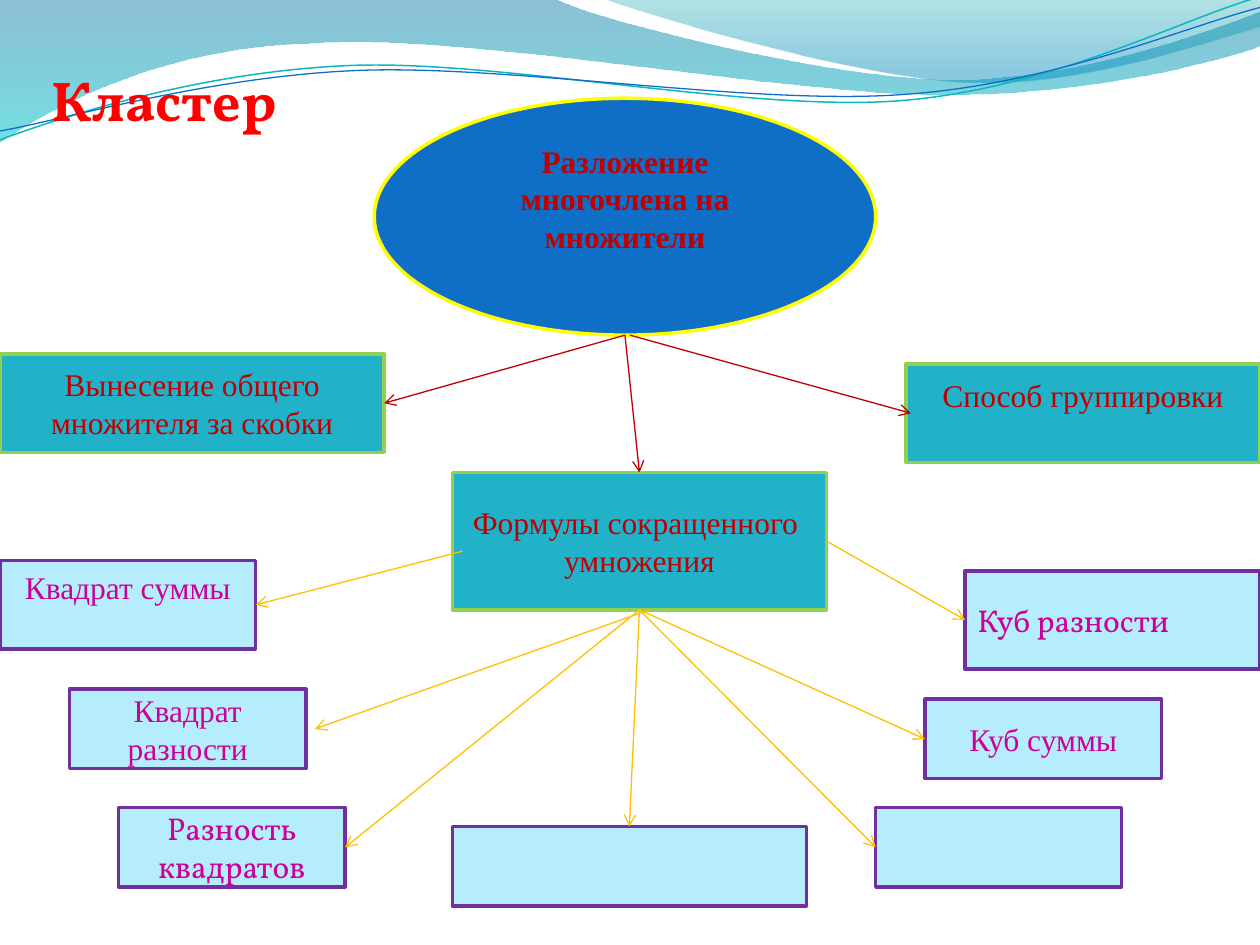
import math
from dataclasses import dataclass

from lxml import etree
from pptx import Presentation
from pptx import util as u
from pptx.dml.color import RGBColor
from pptx.enum import shapes, text
from pptx.oxml.ns import qn


@dataclass(frozen=True)
class Theme:
    serif: str = "Times New Roman"
    display: str = "Vollkorn"
    title_size: int = 32
    body_size: int = 18
    title: str = "FF0000"
    method: str = "C00000"
    formula: str = "CC0099"
    formula_arrow: str = "FFC000"
    blue: str = "0F6FC6"
    teal: str = "0AB8BF"


@dataclass(frozen=True)
class Box:
    left: float
    top: float
    width: float
    height: float

    def inside(self, left, top, width, height):
        return Box(self.left + left, self.top + top, width, height)

    def lengths(self):
        return [u.Inches(side) for side in (self.left, self.top, self.width, self.height)]


THEME = Theme()
CURVE_TILT = 357.3
SIDES = {"left": (0, 0.5), "right": (1, 0.5), "top": (0.5, 0), "bottom": (0.5, 1)}
STYLES = {
    "root": {"fill": THEME.blue, "line": "FFFF00", "color": THEME.method, "bold": True},
    "method": {"fill": "21B2C9", "line": "92D050", "color": THEME.method},
    "formula": {"fill": "B5EDFD", "line": "7030A0", "color": THEME.formula},
}
LEFT_WAVE = [
    (0, 0), (4.4, -0.01),
    (4.76, 0.17, 6.64, 0.63, 7.58, 0.63), (8.53, 0.63, 9.58, 0.26, 10, 0.09),
    (10.01, 0.36),
    (9.83, 0.44, 8.7, 0.76, 7.46, 0.75), (6.22, 0.75, 3.82, 0.28, 2.57, 0.34),
    (1.29, 0.36, 0.46, 0.83, -0.01, 1.13), (0, 0),
]
RIGHT_WAVE = [
    (4.79, -0.01),
    (5.09, 0.11, 6.82, 0.62, 7.69, 0.65), (8.56, 0.69, 9.61, 0.32, 10, 0.21),
    (10, 0), (4.79, -0.01),
]
TEAL_CURVE = [
    (0, 1.11),
    (0.48, 0.93, 1.58, 0.57, 2.77, 0.52), (3.95, 0.47, 5.93, 0.89, 7.13, 0.8),
    (8.33, 0.71, 9.38, 0.15, 9.98, -0.02),
]
BLUE_CURVE = [
    (0, 1.04),
    (0.47, 0.96, 1.64, 0.61, 2.83, 0.56), (4.03, 0.51, 5.97, 0.84, 7.17, 0.75),
    (8.36, 0.67, 9.41, 0.21, 10, 0.06),
]


def color(value):
    return RGBColor.from_string(value)


def level(point, center):
    turn = math.radians(360 - CURVE_TILT)
    x, y = point[0] - center[0], point[1] - center[1]
    return (center[0] + x * math.cos(turn) - y * math.sin(turn),
            center[1] + x * math.sin(turn) + y * math.cos(turn))


def add_outline(page, box, segments, closed, center=None):
    points = [segment[i:i + 2] for segment in segments for i in range(0, len(segment), 2)]
    if center:
        points = [level(point, center) for point in points]
    corners = [(u.Inches(box.left + x), u.Inches(box.top + y)) for x, y in points]
    builder = page.shapes.build_freeform(*corners[0])
    builder.add_line_segments(corners[1:], close=closed)
    outline = builder.convert_to_shape()
    outline.shadow.inherit = False
    strokes = iter(list(outline.element.spPr.iter(qn("a:lnTo"))))
    for segment in segments[1:]:
        stroke = next(strokes)
        if len(segment) == 6:
            bend = etree.Element(qn("a:cubicBezTo"))
            stroke.addprevious(bend)
            for part in (stroke, next(strokes), next(strokes)):
                bend.append(part[0])
                part.getparent().remove(part)
    return outline


def add_header(page, box):
    waves = [
        (LEFT_WAVE, [(0, "0074A1", 45), (1, "00C6CF", 55)]),
        (RIGHT_WAVE, [(0, "00A1A9", 30), (0.8, "008BBF", 45)]),
    ]
    for segments, stops in waves:
        wave = add_outline(page, box, segments, True)
        wave.line.fill.background()
        wave.fill.gradient()
        wave.fill.gradient_angle = 270
        for stop, (position, value, _) in zip(wave.fill.gradient_stops, stops):
            stop.position = position
            stop.color.rgb = color(value)
        tones = wave.element.spPr.iter(qn("a:srgbClr"))
        for tone, (_, _, opacity) in zip(tones, stops):
            etree.SubElement(tone, qn("a:alpha"), val=str(opacity * 1000))
    curves = [
        (TEAL_CURVE, THEME.teal, 0.85, (4.99, 0.58)),
        (BLUE_CURVE, THEME.blue, 0.75, (5, 0.59)),
    ]
    for segments, value, width, center in curves:
        curve = add_outline(page, box, segments, False, center)
        curve.rotation = CURVE_TILT
        curve.fill.background()
        curve.line.color.rgb = color(value)
        curve.line.width = u.Pt(width)


def write(frame, words, value, **formats):
    frame.word_wrap = True
    span = frame.paragraphs[0].add_run()
    span.text = words
    settings = {"name": THEME.serif, "size": u.Pt(THEME.body_size), "bold": False, **formats}
    for name, setting in settings.items():
        setattr(span.font, name, setting)
    span.font.color.rgb = color(value)


def add_card(page, box, style, words="", font=THEME.serif, raised=False, align="CENTER"):
    look = STYLES[style]
    kind = shapes.MSO_SHAPE.OVAL if style == "root" else shapes.MSO_SHAPE.RECTANGLE
    card = page.shapes.add_shape(kind, *box.lengths())
    card.shadow.inherit = False
    card.fill.solid()
    card.fill.fore_color.rgb = color(look["fill"])
    card.line.color.rgb = color(look["line"])
    card.line.width = u.Pt(2)
    if words:
        frame = card.text_frame
        frame.vertical_anchor = text.MSO_ANCHOR.MIDDLE
        frame.margin_bottom = u.Inches(0.34 if raised else 0.05)
        frame.paragraphs[0].alignment = getattr(text.PP_ALIGN, align)
        write(frame, words, look["color"], name=font, bold=look.get("bold", False))
    return box


def anchor(box, side, nudge):
    across, down = SIDES[side]
    return (u.Inches(box.left + across * box.width + nudge[0]),
            u.Inches(box.top + down * box.height + nudge[1]))


def add_arrow(page, value, source, exit_side, target, entry_side, start=(0, 0), end=(0, 0)):
    arrow = page.shapes.add_connector(
        shapes.MSO_CONNECTOR.STRAIGHT,
        *anchor(source, exit_side, start), *anchor(target, entry_side, end))
    arrow.line.color.rgb = color(value)
    arrow.line.width = u.Pt(0.75)
    etree.SubElement(arrow.element.spPr.find(qn("a:ln")), qn("a:tailEnd"), type="arrow")
    etree.SubElement(arrow.element.spPr, qn("a:effectLst"))


def add_methods(page, box):
    hub = add_card(page, box.inside(3.59, 2.97, 2.97, 1.09), "method",
                   "Формулы сокращенного  умножения")
    grouping = add_card(page, box.inside(7.19, 2.11, 2.81, 0.78), "method",
                        "Способ группировки", raised=True)
    factoring = add_card(page, box.inside(0, 2.03, 3.05, 0.78), "method",
                         "Вынесение общего множителя за скобки")
    root = add_card(page, box.inside(2.97, 0, 3.98, 1.88), "root",
                    "Разложение многочлена на множители", raised=True)
    add_arrow(page, THEME.method, root, "bottom", hub, "top")
    add_arrow(page, THEME.method, root, "bottom", factoring, "right")
    add_arrow(page, THEME.method, root, "bottom", grouping, "left", (0.04, 0), (0.04, 0))
    return hub


def add_formulas(page, box, hub):
    def card(*place, **details):
        return add_card(page, box.inside(*place), "formula", **details)

    def link(*route):
        add_arrow(page, THEME.formula_arrow, hub, *route)

    squares = card(0.94, 1.96, 1.8, 0.63, words="Разность квадратов", font=THEME.display)
    square_difference = card(0.55, 1.02, 1.88, 0.63, words="Квадрат разности")
    middle_blank = card(3.59, 2.11, 2.81, 0.63)
    right_blank = card(6.95, 1.96, 1.95, 0.63)
    square_sum = card(0, 0, 2.03, 0.7, words="Квадрат суммы", raised=True)
    cube_sum = card(7.34, 1.1, 1.88, 0.63, words="Куб суммы")
    cube_difference = card(7.66, 0.08, 2.34, 0.78, words="Куб разности",
                           font=THEME.display, align="LEFT")
    link("left", square_sum, "right", (0.08, 0.08))
    link("bottom", middle_blank, "top")
    link("right", cube_difference, "left")
    link("bottom", cube_sum, "left")
    link("bottom", right_blank, "left")
    link("bottom", squares, "right")
    link("bottom", square_difference, "right", (0.08, 0), (0.07, 0))


def add_title(page, box):
    label = page.shapes.add_textbox(*box.lengths())
    write(label.text_frame, "Кластер", THEME.title, name=THEME.display,
          size=u.Pt(THEME.title_size), bold=True)


def main():
    deck = Presentation()
    deck.slide_width, deck.slide_height = u.Inches(10), u.Inches(7.5)
    page = deck.slides.add_slide(deck.slide_layouts[6])
    add_header(page, Box(0, 0, 10, 1.14))
    hub = add_methods(page, Box(0, 0.78, 10, 4.06))
    add_formulas(page, Box(0, 4.45, 10, 2.74), hub)
    add_title(page, Box(0.31, 0.47, 2.42, 0.64))
    deck.save("out.pptx")


if __name__ == "__main__":
    main()
